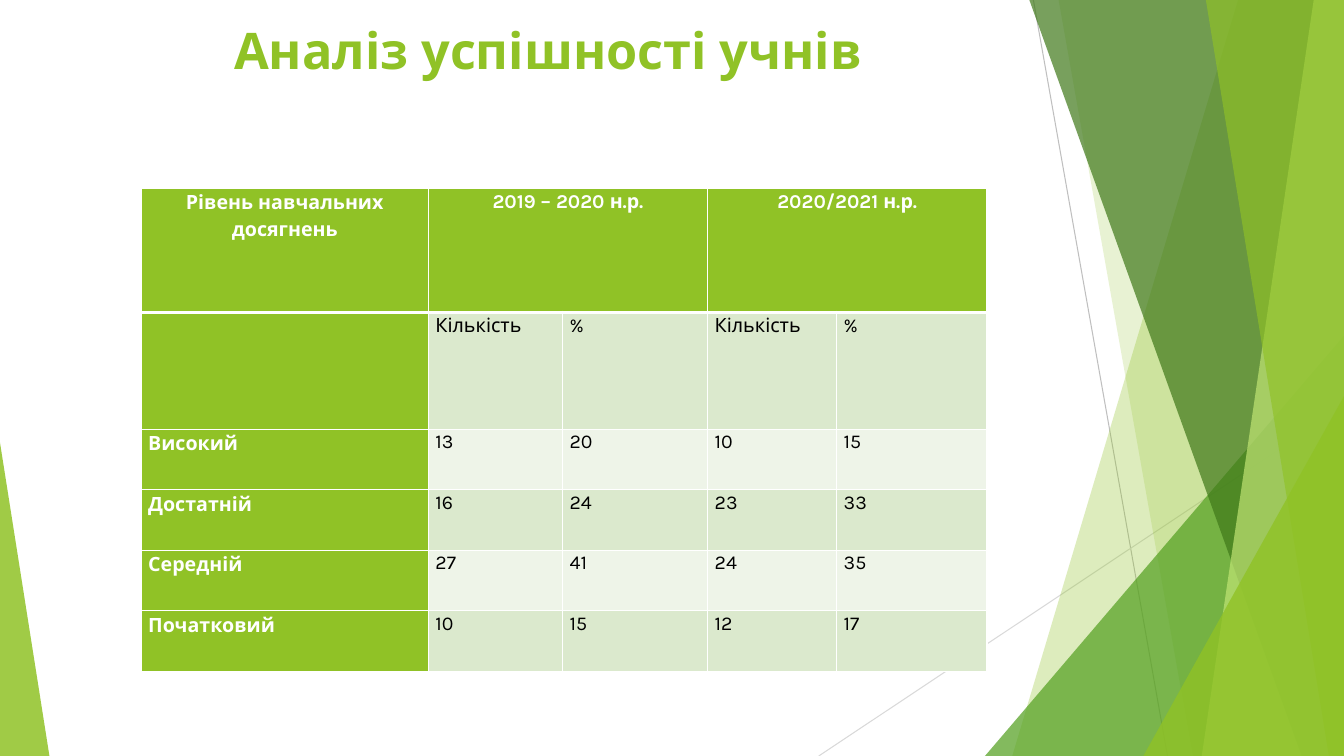
import pptx
import pptx.util
import pptx.dml.color
import pptx.enum.shapes
import pptx.enum.text
import pptx.oxml
import pptx.oxml.ns

COLORS = {
    "lime": "90C226", "green": "54A021", "forest": "3F7819", "pale": "C0E474",
    "band_dark": "DBE9CD", "band_light": "EEF4E8", "white": "FFFFFF",
    "black": "000000", "gray": "BFBFBF", "light_gray": "D9D9D9",
}
ALIGN = pptx.enum.text.PP_ALIGN
SHAPE = pptx.enum.shapes.MSO_SHAPE


def rgb(name):
    return pptx.dml.color.RGBColor.from_string(COLORS[name])


class SlideBuilder:
    """Holds the style and the slide; lengths are percentages of the slide."""

    font = "Karla"

    def __init__(self, presentation):
        self.width = presentation.slide_width
        self.height = presentation.slide_height
        self.slide = presentation.slides.add_slide(presentation.slide_layouts[5])
        self.shapes = self.slide.shapes

    def x(self, share):
        return round(self.width * share / 100)

    def y(self, share):
        return round(self.height * share / 100)

    def box(self, left, top, width, height):
        return self.x(left), self.y(top), self.x(width), self.y(height)

    def paint(self, shape, color, opacity):
        shape.shadow.inherit = False
        shape.line.fill.background()
        shape.fill.solid()
        shape.fill.fore_color.rgb = rgb(color)
        for element in shape._element.spPr.iter(pptx.oxml.ns.qn("a:srgbClr")):
            alpha = pptx.oxml.parse_xml(
                f'<a:alpha {pptx.oxml.ns.nsdecls("a")} val="{opacity * 1000}"/>')
            element.append(alpha)

    def line(self, start, end, color):
        connector = self.shapes.add_connector(
            pptx.enum.shapes.MSO_CONNECTOR.STRAIGHT,
            self.x(start[0]), self.y(start[1]), self.x(end[0]), self.y(end[1]))
        connector.line.color.rgb = rgb(color)
        connector.line.width = pptx.util.Pt(0.75)
        connector._element.spPr.append(pptx.oxml.parse_xml(
            f'<a:effectLst {pptx.oxml.ns.nsdecls("a")}/>'))

    def ribbon(self, top_left, bottom_left, color, opacity):
        """Full-height band from a slanted left edge to the slide's right edge."""
        builder = self.shapes.build_freeform(self.x(top_left), 0, scale=1.0)
        corners = [(100, 0), (100, 100), (bottom_left, 100)]
        builder.add_line_segments([(self.x(a), self.y(b)) for a, b in corners], close=True)
        self.paint(builder.convert_to_shape(), color, opacity)

    def triangle(self, left, top, width, apex, color, opacity):
        """Triangle standing on the slide's bottom edge."""
        shape = self.shapes.add_shape(
            SHAPE.ISOSCELES_TRIANGLE, *self.box(left, top, width, 100 - top))
        shape.adjustments[0] = apex
        self.paint(shape, color, opacity)

    def add_text(self, paragraph, text, size, color, bold, align):
        paragraph.alignment = align
        run = paragraph.add_run()
        run.text = text
        run.font.name = self.font
        run.font.size = pptx.util.Pt(size)
        run.font.bold = bold
        run.font.color.rgb = rgb(color)

    def title(self, text, *box):
        title = self.shapes.title
        title.left, title.top, title.width, title.height = self.box(*box)
        frame = title.text_frame
        frame.word_wrap = True
        frame.vertical_anchor = pptx.enum.text.MSO_ANCHOR.TOP
        self.add_text(frame.paragraphs[0], text, 36, "lime", True, ALIGN.CENTER)
        self.shapes._spTree.append(title._element)  # in front of the ribbons

    def borders(self, cell, bottom):
        properties = cell._tc.get_or_add_tcPr()
        for side, points in (("L", 1), ("R", 1), ("T", 1), ("B", bottom)):
            properties.append(pptx.oxml.parse_xml(
                f'<a:ln{side} {pptx.oxml.ns.nsdecls("a")} w="{points * 12700}"><a:solidFill>'
                f'<a:srgbClr val="{COLORS["white"]}"/></a:solidFill></a:ln{side}>'))

    def cell(self, cell, text, row, column):
        header, label = row == 0, column == 0
        self.borders(cell, 3 if header else 1)
        cell.fill.solid()
        band = "band_dark" if row % 2 else "band_light"
        cell.fill.fore_color.rgb = rgb("lime" if header or label else band)
        cell.margin_left = cell.margin_right = pptx.util.Inches(0.07)
        cell.margin_top = cell.margin_bottom = 0
        if not text:
            return
        paragraph = cell.text_frame.paragraphs[0]
        paragraph.line_spacing = 1.15 if label else 1.07
        if not label:
            paragraph.space_after = pptx.util.Pt(8)
        strong = header or label
        align = ALIGN.CENTER if header else ALIGN.JUSTIFY if label else ALIGN.LEFT
        self.add_text(paragraph, text, 14, "white" if strong else "black", strong, align)

    def table(self, left, top, widths, heights, rows, merges):
        frame = self.shapes.add_table(
            len(heights), len(widths), *self.box(left, top, sum(widths), sum(heights)))
        table = frame.table
        for column, width in zip(table.columns, widths):
            column.width = self.x(width)
        for row, height in zip(table.rows, heights):
            row.height = self.y(height)
        for row, values in enumerate(rows):
            for column, text in enumerate(values):
                self.cell(table.cell(row, column), text, row, column)
        for first, last in merges:
            table.cell(*first).merge(table.cell(*last))


def main():
    presentation = pptx.Presentation()
    presentation.slide_width = pptx.util.Inches(13.33)
    presentation.slide_height = pptx.util.Inches(7.5)
    builder = SlideBuilder(presentation)

    # Background decoration, back to front
    builder.line((76.89, 0), (86.87, 100), "gray")
    builder.line((100, 53.73), (60.92, 100), "light_gray")
    builder.ribbon(92.12, 75.32, "lime", 30)
    builder.ribbon(78.77, 88.75, "lime", 20)
    builder.triangle(73.29, 44.4, 26.71, 1, "green", 72)
    builder.ribbon(76.59, 96.85, "forest", 70)
    builder.ribbon(97.75, 89.42, "pale", 70)
    builder.ribbon(89.72, 98.87, "lime", 65)
    builder.triangle(85.07, 52.4, 14.93, 1, "lime", 80)
    builder.triangle(0, 58.53, 3.68, 0, "lime", 85)

    # Title
    builder.title("Аналіз успішності учнів", 5.55, 1.87, 70.52, 19.2)

    # Results table
    rows = [
        ["Рівень навчальних досягнень", "2019 – 2020 н.р.", "", "2020/2021 н.р.", ""],
        ["", "Кількість", "%", "Кількість", "%"],
        ["Високий", "13", "20", "10", "15"],
        ["Достатній", "16", "24", "23", "33"],
        ["Середній", "27", "41", "24", "35"],
        ["Початковий", "10", "15", "12", "17"],
    ]
    builder.table(10.5, 24.93, [21.38, 9.98, 10.8, 9.6, 11.18],
                  [16.4, 15.47] + [8] * 4, rows,
                  [((0, 1), (0, 2)), ((0, 3), (0, 4))])

    presentation.save("out.pptx")


if __name__ == "__main__":
    main()
